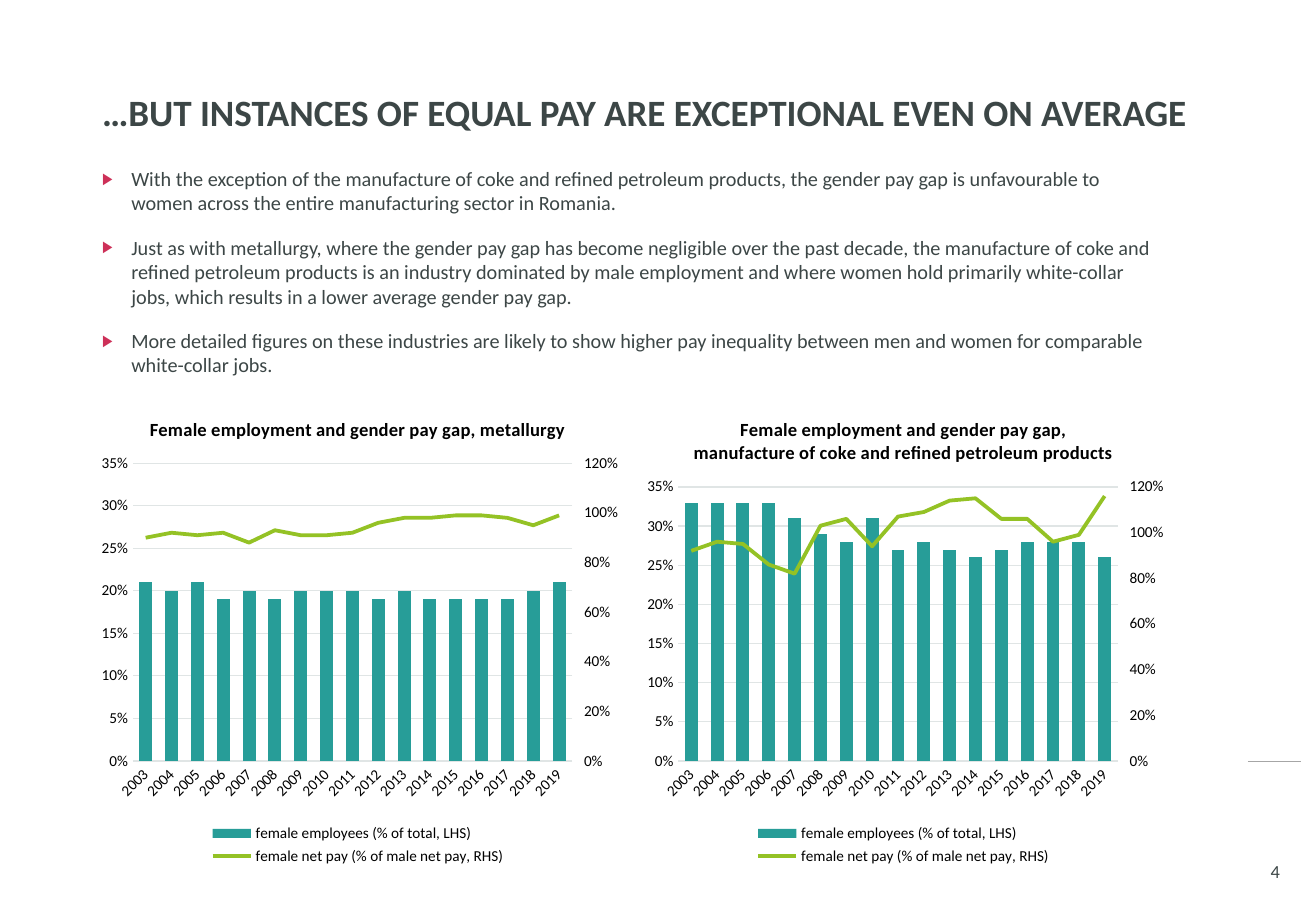
from copy import deepcopy
from dataclasses import dataclass

from lxml import etree
from pptx import Presentation
from pptx.chart.axis import CategoryAxis, ValueAxis
from pptx.chart.data import CategoryChartData
from pptx.dml.color import RGBColor
from pptx.enum.chart import XL_CHART_TYPE, XL_LEGEND_POSITION, XL_MARKER_STYLE, XL_TICK_MARK
from pptx.enum.shapes import MSO_CONNECTOR
from pptx.enum.text import MSO_ANCHOR, MSO_AUTO_SIZE, PP_ALIGN
from pptx.oxml import parse_xml
from pptx.oxml.ns import nsdecls, qn
from pptx.util import Inches, Pt


@dataclass(frozen=True)
class Theme:
    font: str = "Calibri"
    text: str = "3C4646"
    chart_text: str = "000000"
    bullet: str = "CD3058"
    rule: str = "A6A6A6"
    grid: str = "E0E5E5"
    columns: str = "279D98"
    line: str = "94C225"
    title_size: float = 22
    body_size: float = 12
    page_size: float = 10.9
    chart_title_size: float = 11
    chart_size: float = 10
    label_size: float = 9


theme = Theme()


def write(paragraph, text, size, color=theme.text, bold=False, align=PP_ALIGN.LEFT):
    paragraph.alignment = align
    run = paragraph.add_run()
    run.text = text
    run.font.name = theme.font
    run.font.size = Pt(size)
    run.font.bold = bold
    run.font.color.rgb = RGBColor.from_string(color)


def add_line_on_right_axis(chart, maximum):
    """Move the second series of a column chart to a line plot with its own axes."""
    column_plot = chart.plots[0]._element
    plot_area = column_plot.getparent()
    line_plot = parse_xml(
        f'<c:lineChart {nsdecls("c")}><c:grouping val="standard"/><c:varyColors val="0"/>'
        '<c:marker val="1"/><c:axId val="5001"/><c:axId val="5002"/></c:lineChart>'
    )
    series = column_plot.findall(qn("c:ser"))[1]
    for invert in series.findall(qn("c:invertIfNegative")):
        series.remove(invert)
    line_plot.insert(2, series)
    column_plot.addnext(line_plot)

    value_element = deepcopy(chart.value_axis._element)
    category_element = deepcopy(chart.category_axis._element)
    chart.value_axis._element.addnext(value_element)
    value_element.addnext(category_element)
    for element, own, other in ((category_element, "5001", "5002"), (value_element, "5002", "5001")):
        element.find(qn("c:axId")).set("val", own)
        element.find(qn("c:crossAx")).set("val", other)
    value_element.find(qn("c:axPos")).set("val", "r")
    value_element.find(qn("c:crosses")).set("val", "max")
    CategoryAxis(category_element).visible = False
    right_axis = ValueAxis(value_element)
    right_axis.has_major_gridlines = False
    right_axis.maximum_scale = maximum
    right_axis.major_unit = 0.2
    right_axis.major_tick_mark = XL_TICK_MARK.OUTSIDE


presentation = Presentation()
presentation.slide_width = Inches(10.83)
presentation.slide_height = Inches(7.5)
slide = presentation.slides.add_slide(presentation.slide_layouts[1])

# Page number and rule
page_number = slide.shapes.add_textbox(Inches(10.25), Inches(6.97), Inches(0.49), Inches(0.41))
page_number.text_frame.word_wrap = True
page_number.text_frame.vertical_anchor = MSO_ANCHOR.MIDDLE
write(page_number.text_frame.paragraphs[0], "4", theme.page_size, align=PP_ALIGN.CENTER)

rule = slide.shapes.add_connector(
    MSO_CONNECTOR.STRAIGHT, Inches(10.27), Inches(6.27), Inches(10.71), Inches(6.27)
)
rule.line.color.rgb = RGBColor.from_string(theme.rule)
rule.line.width = Pt(1)
etree.SubElement(rule._element.spPr, qn("a:effectLst"))

# Title and bullets
title, body = slide.shapes.title, slide.placeholders[1]
for placeholder, top, width, height, anchor in (
    (title, 0.4, 9.34, 1.09, MSO_ANCHOR.MIDDLE),
    (body, 1.32, 8.9, 1.88, MSO_ANCHOR.TOP),
):
    placeholder.left, placeholder.top = Inches(0.74), Inches(top)
    placeholder.width, placeholder.height = Inches(width), Inches(height)
    placeholder.text_frame.word_wrap = True
    placeholder.text_frame.auto_size = MSO_AUTO_SIZE.NONE
    placeholder.text_frame.vertical_anchor = anchor

heading = title.text_frame.paragraphs[0]
heading.line_spacing = 0.9
write(heading, "…BUT INSTANCES OF EQUAL PAY ARE EXCEPTIONAL EVEN ON AVERAGE", theme.title_size, bold=True)

points = [
    "With the exception of the manufacture of coke and refined petroleum products, the gender pay gap "
    "is unfavourable to women across the entire manufacturing sector in Romania.",
    "Just as with metallurgy, where the gender pay gap has become negligible over the past decade, the "
    "manufacture of coke and refined petroleum products is an industry dominated by male employment and "
    "where women hold primarily white-collar jobs, which results in a lower average gender pay gap.",
    "More detailed figures on these industries are likely to show higher pay inequality between men and "
    "women for comparable white-collar jobs.",
]
for index, point in enumerate(points):
    paragraph = body.text_frame.add_paragraph() if index else body.text_frame.paragraphs[0]
    properties = paragraph._p.get_or_add_pPr()
    properties.set("marL", str(Inches(0.24)))
    properties.set("indent", str(Inches(-0.24)))
    color = etree.SubElement(properties, qn("a:buClr"))
    etree.SubElement(color, qn("a:srgbClr"), val=theme.bullet)
    etree.SubElement(properties, qn("a:buSzPct"), val="80000")
    etree.SubElement(properties, qn("a:buFont"), typeface="Arial")
    etree.SubElement(properties, qn("a:buChar"), char="▶")
    paragraph.space_before = Pt(12 if index else 0)
    write(paragraph, point, theme.body_size)

# Charts: left edge, title, plot top and height as shares of the chart, employees, pay
years = [str(year) for year in range(2003, 2020)]
charts = [
    (
        0.74, "Female employment and gender pay gap, metallurgy", 0.14, 0.63,
        [0.21, 0.2, 0.21, 0.19, 0.2, 0.19, 0.2, 0.2, 0.2, 0.19, 0.2, 0.19, 0.19, 0.19, 0.19, 0.2, 0.21],
        [0.9, 0.92, 0.91, 0.92, 0.88, 0.93, 0.91, 0.91, 0.92, 0.96, 0.98, 0.98, 0.99, 0.99, 0.98, 0.95, 0.99],
    ),
    (
        5.23, "Female employment and gender pay gap,\nmanufacture of coke and refined petroleum products",
        0.19, 0.58,
        [0.33, 0.33, 0.33, 0.33, 0.31, 0.29, 0.28, 0.31, 0.27, 0.28, 0.27, 0.26, 0.27, 0.28, 0.28, 0.28, 0.26],
        [0.92, 0.96, 0.95, 0.86, 0.82, 1.03, 1.06, 0.94, 1.07, 1.09, 1.14, 1.15, 1.06, 1.06, 0.96, 0.99, 1.16],
    ),
]
for left, chart_title, plot_top, plot_height, employees, pay in charts:
    data = CategoryChartData(number_format="0%")
    data.categories = years
    data.add_series("female employees (% of total, LHS)", employees)
    data.add_series("female net pay (% of male net pay, RHS)", pay)
    chart = slide.shapes.add_chart(
        XL_CHART_TYPE.COLUMN_CLUSTERED, Inches(left), Inches(3.27), Inches(4.41), Inches(3.89), data
    ).chart
    chart.has_title = True
    chart.chart_title.include_in_layout = False
    title_frame = chart.chart_title.text_frame
    for index, text in enumerate(chart_title.split("\n")):
        paragraph = title_frame.add_paragraph() if index else title_frame.paragraphs[0]
        write(paragraph, text, theme.chart_title_size, theme.chart_text, bold=True, align=PP_ALIGN.CENTER)
    chart.has_legend = True
    chart.legend.position = XL_LEGEND_POSITION.BOTTOM
    chart.legend.include_in_layout = False

    category_axis, value_axis = chart.category_axis, chart.value_axis
    fonts = [chart.font, chart.legend.font, category_axis.tick_labels.font, value_axis.tick_labels.font]
    for font, size in zip(fonts, [theme.chart_size] + [theme.label_size] * 3):
        font.name = theme.font
        font.size = Pt(size)
        font.color.rgb = RGBColor.from_string(theme.chart_text)
    category_axis._element.find(qn("c:txPr")).find(qn("a:bodyPr")).set("rot", "-2700000")
    value_axis.minimum_scale, value_axis.maximum_scale, value_axis.major_unit = 0, 0.35, 0.05
    value_axis.tick_labels.number_format = "0%"
    value_axis.tick_labels.number_format_is_linked = False
    value_axis.format.line.fill.background()
    for axis in (category_axis, value_axis):
        axis.major_tick_mark = axis.minor_tick_mark = XL_TICK_MARK.NONE
    for line in (category_axis.format.line, value_axis.major_gridlines.format.line):
        line.color.rgb = RGBColor.from_string(theme.grid)
        line.width = Pt(0.75)

    add_line_on_right_axis(chart, maximum=1.2)
    columns, pay_line = chart.plots[0], chart.plots[1].series[0]
    columns.gap_width = 100
    columns.vary_by_categories = False
    columns.series[0].format.fill.solid()
    columns.series[0].format.fill.fore_color.rgb = RGBColor.from_string(theme.columns)
    pay_line.smooth = False
    pay_line.marker.style = XL_MARKER_STYLE.NONE
    pay_line.format.line.color.rgb = RGBColor.from_string(theme.line)
    pay_line.format.line.width = Pt(2.25)

    plot_area = columns._element.getparent()
    for old_layout in plot_area.findall(qn("c:layout")):
        plot_area.remove(old_layout)
    layout = etree.Element(qn("c:layout"))
    manual = etree.SubElement(layout, qn("c:manualLayout"))
    for tag, value in (
        ("layoutTarget", "inner"), ("xMode", "edge"), ("yMode", "edge"),
        ("x", 0.08), ("y", plot_top), ("w", 0.82), ("h", plot_height),
    ):
        etree.SubElement(manual, qn(f"c:{tag}"), val=str(value))
    plot_area.insert(0, layout)

presentation.save("out.pptx")
